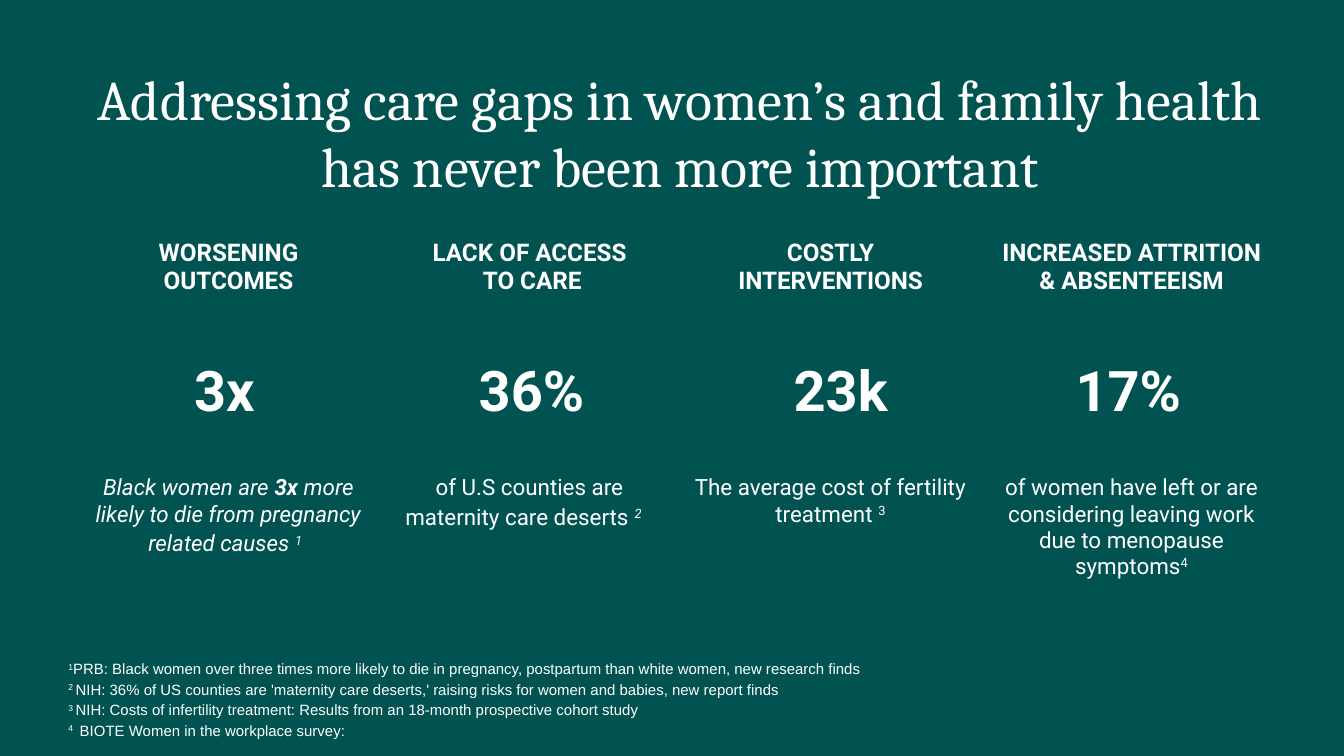
from pptx import Presentation
from pptx.dml.color import RGBColor
from pptx.enum.text import MSO_ANCHOR, MSO_AUTO_SIZE, PP_ALIGN
from pptx.util import Inches, Pt

COLORS = {"background": "005350", "text": "FFFFFF"}
NO_STYLE_NO_GRID = "{2D5ABB26-0587-4C30-8999-92F81FD0307C}"


def add_span(para, text, size, font="Roboto", bold=False, italic=False, raised=False):
    span = para.add_run()
    span.text = text
    span.font.size = Pt(size)
    span.font.name = font
    span.font.bold = bold
    span.font.italic = italic
    span.font.color.rgb = RGBColor.from_string(COLORS["text"])
    if raised:
        span._r.get_or_add_rPr().set("baseline", "30000")


def set_insets(frame, inset):
    frame.margin_left = frame.margin_right = Inches(inset)
    frame.margin_top = frame.margin_bottom = Inches(inset)
    frame.word_wrap = True


deck = Presentation()
deck.slide_width = Inches(10)
deck.slide_height = Inches(10) * 9 // 16
page = deck.slides.add_slide(deck.slide_layouts[5])
page.background.fill.solid()
page.background.fill.fore_color.rgb = RGBColor.from_string(COLORS["background"])

# Table of headings and descriptions
headings = [
    ["WORSENING OUTCOMES"],
    ["LACK OF ACCESS", " TO CARE"],
    ["COSTLY INTERVENTIONS"],
    ["INCREASED ATTRITION & ABSENTEEISM"],
]
italic, raised = {"italic": True}, {"raised": True}
descriptions = [
    [
        ("Black women are ", 12, italic),
        ("3x", 12, {"bold": True, "italic": True}),
        (" more likely to die from pregnancy related causes ", 12, italic),
        ("1", 12, italic | raised),
        (" ", 14, italic),
    ],
    [
        ("of U.S counties are maternity care deserts ", 12, {}),
        ("2", 12, italic | raised),
        (" ", 14, italic),
        (" ", 12, {}),
    ],
    [("The average cost of fertility treatment ", 12, {}), ("3", 12, raised)],
    [
        ("of women have left or are considering leaving work due to menopause symptoms", 12, {}),
        ("4", 12, raised),
    ],
]
table_frame = page.shapes.add_table(
    3, 4, Inches(0.58), Inches(1.68), Inches(8.96), Inches(2.97))
table = table_frame.table
table.first_row = table.horz_banding = False
table._tbl.tblPr.find("{*}tableStyleId").text = NO_STYLE_NO_GRID
for column in table.columns:
    column.width = Inches(2.24)
for row, height in zip(table.rows, (0.52, 1.12, 0.98)):
    row.height = Inches(height)
for cell in table.iter_cells():
    cell.fill.background()
    cell.margin_left = cell.margin_right = Inches(0.1)
    cell.margin_top = cell.margin_bottom = Inches(0.1)

for index, (lines, spans) in enumerate(zip(headings, descriptions)):
    frame = table.cell(0, index).text_frame
    for number, line in enumerate(lines):
        para = frame.add_paragraph() if number else frame.paragraphs[0]
        para.alignment = PP_ALIGN.CENTER
        add_span(para, line, 13, bold=True)
    para = table.cell(2, index).text_frame.paragraphs[0]
    para.alignment = PP_ALIGN.CENTER
    for text, size, style in spans:
        add_span(para, text, size, **style)

# Title
title = page.shapes.title
title.left, title.top = Inches(0.58), Inches(0.48)
title.width, title.height = Inches(8.96), Inches(1.01)
frame = title.text_frame
set_insets(frame, 0)
frame.auto_size = MSO_AUTO_SIZE.SHAPE_TO_FIT_TEXT
frame.vertical_anchor = MSO_ANCHOR.TOP
para = frame.paragraphs[0]
para.alignment = PP_ALIGN.CENTER
add_span(para, "Addressing care gaps in women’s and family health has never been more important",
         30, font="Cambria")

# Key figures
figures = [("3x", 1.12, 1.1), ("36%", 3.07, 1.77), ("23k", 5.45, 1.61), ("17%", 7.59, 1.61)]
for text, left, width in figures:
    box = page.shapes.add_textbox(Inches(left), Inches(2.61), Inches(width), Inches(0.57))
    set_insets(box.text_frame, 0.1)
    box.text_frame.vertical_anchor = MSO_ANCHOR.MIDDLE
    para = box.text_frame.paragraphs[0]
    para.alignment = PP_ALIGN.CENTER
    add_span(para, text, 30, bold=True)

# Footnotes
footnotes = [
    ("1", "PRB: Black women over three times more likely to die in pregnancy, "
          "postpartum than white women, new research finds"),
    ("2 ", "NIH: 36% of US counties are 'maternity care deserts,' raising risks "
           "for women and babies, new report finds"),
    ("3 ", "NIH: Costs of infertility treatment: Results from an 18-month "
           "prospective cohort study"),
    ("4 ", " BIOTE Women in the workplace survey:"),
]
box = page.shapes.add_textbox(Inches(0.41), Inches(4.79), Inches(8.65), Inches(1.06))
frame = box.text_frame
set_insets(frame, 0.1)
frame.auto_size = MSO_AUTO_SIZE.SHAPE_TO_FIT_TEXT
for number, (mark, note) in enumerate(footnotes):
    para = frame.add_paragraph() if number else frame.paragraphs[0]
    para.line_spacing = 1.15
    add_span(para, mark, 8, font="Arial", raised=True)
    add_span(para, note, 8, font="Arial")

deck.save("out.pptx")
